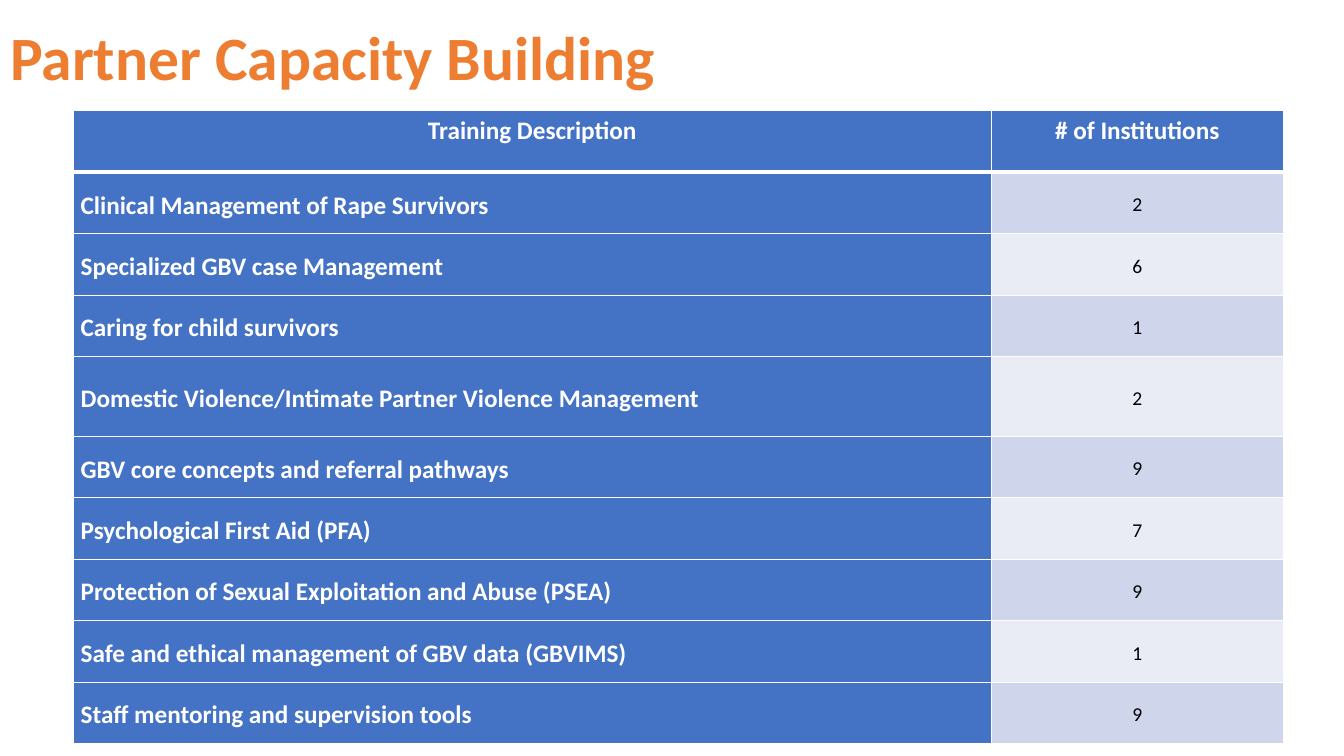
from lxml.etree import SubElement
from pptx import Presentation
from pptx.dml.color import RGBColor
from pptx.enum.text import MSO_ANCHOR, PP_ALIGN
from pptx.oxml.ns import qn
from pptx.util import Inches, Pt

FONT = "Calibri"
ORANGE, BLUE, WHITE, BLACK = "ED7D31", "4472C4", "FFFFFF", "000000"
BANDS = ("CFD5EA", "E9EBF5")
HEADERS = ("Training Description", "# of Institutions")
TRAININGS = (
    ("Clinical Management of Rape Survivors", 2),
    ("Specialized GBV case Management", 6),
    ("Caring for child survivors", 1),
    ("Domestic Violence/Intimate Partner Violence Management", 2),
    ("GBV core concepts and referral pathways", 9),
    ("Psychological First Aid (PFA)", 7),
    ("Protection of Sexual Exploitation and Abuse (PSEA)", 9),
    ("Safe and ethical management of GBV data (GBVIMS)", 1),
    ("Staff mentoring and supervision tools", 9),
)
COLUMN_WIDTHS = (9.1, 2.9)
ROW_HEIGHT, TALL_ROW_HEIGHT, TALL_ROW = 0.61, 0.79, 4


def rgb(color):
    """Turn a hex string into a colour."""
    return RGBColor.from_string(color)


def write(text_frame, text, size, color, bold, align, spacing):
    """Write one formatted run into the first paragraph."""
    paragraph = text_frame.paragraphs[0]
    paragraph.alignment = align
    paragraph.line_spacing = spacing
    run = paragraph.add_run()
    run.text = text
    run.font.name = FONT
    run.font.size = Pt(size)
    run.font.bold = bold
    run.font.color.rgb = rgb(color)


def add_title(slide, text):
    """Place and format the slide title."""
    title = slide.shapes.title
    title.left, title.top = Inches(0), Inches(0.1)
    title.width, title.height = Inches(12.73), Inches(1)
    title.text_frame.word_wrap = True
    title.text_frame.vertical_anchor = MSO_ANCHOR.MIDDLE
    write(title.text_frame, text, 44, ORANGE, True, PP_ALIGN.LEFT, 0.9)


def set_borders(cell, top, bottom):
    """Draw white cell borders with the given top and bottom widths."""
    properties = cell._tc.get_or_add_tcPr()
    widths = {"a:lnL": 1, "a:lnR": 1, "a:lnT": top, "a:lnB": bottom}
    for position, (tag, width) in enumerate(widths.items()):
        line = SubElement(properties, qn(tag), w=str(Pt(width)))
        fill = SubElement(line, qn("a:solidFill"))
        SubElement(fill, qn("a:srgbClr"), val=WHITE)
        properties.insert(position, line)


def fill_cell(cell, text, fill, size, color, bold, align, anchor):
    """Fill a cell and write its text."""
    cell.fill.solid()
    cell.fill.fore_color.rgb = rgb(fill)
    cell.margin_left = cell.margin_right = Inches(0.07)
    cell.margin_top = cell.margin_bottom = Inches(0)
    cell.vertical_anchor = anchor
    write(cell.text_frame, text, size, color, bold, align, 1.15)


def add_training_table(slide):
    """Add the table of trainings and institution counts."""
    heights = [ROW_HEIGHT] * (len(TRAININGS) + 1)
    heights[TALL_ROW] = TALL_ROW_HEIGHT
    table = slide.shapes.add_table(
        len(heights), len(COLUMN_WIDTHS), Inches(0.73), Inches(1.1),
        Inches(sum(COLUMN_WIDTHS)), Inches(sum(heights))).table
    table.first_col = True
    for column, width in zip(table.columns, COLUMN_WIDTHS):
        column.width = Inches(width)
    for row, height in zip(table.rows, heights):
        row.height = Inches(height)

    for column, header in enumerate(HEADERS):
        fill_cell(table.cell(0, column), header, BLUE, 18, WHITE, True,
                  PP_ALIGN.CENTER, MSO_ANCHOR.TOP)
    for row, (training, count) in enumerate(TRAININGS, start=1):
        fill_cell(table.cell(row, 0), training, BLUE, 18, WHITE, True,
                  PP_ALIGN.JUSTIFY, MSO_ANCHOR.MIDDLE)
        fill_cell(table.cell(row, 1), str(count), BANDS[(row - 1) % 2], 14, BLACK,
                  False, PP_ALIGN.CENTER, MSO_ANCHOR.MIDDLE)
    for row in range(len(heights)):
        for column in range(len(COLUMN_WIDTHS)):
            set_borders(table.cell(row, column),
                        top=3 if row == 1 else 1, bottom=3 if row == 0 else 1)


def main():
    """Build and save the slide."""
    presentation = Presentation()
    presentation.slide_width = Inches(13.33)
    presentation.slide_height = Inches(7.5)
    slide = presentation.slides.add_slide(presentation.slide_layouts[5])
    add_title(slide, "Partner Capacity Building")
    add_training_table(slide)
    presentation.save("out.pptx")


if __name__ == "__main__":
    main()
